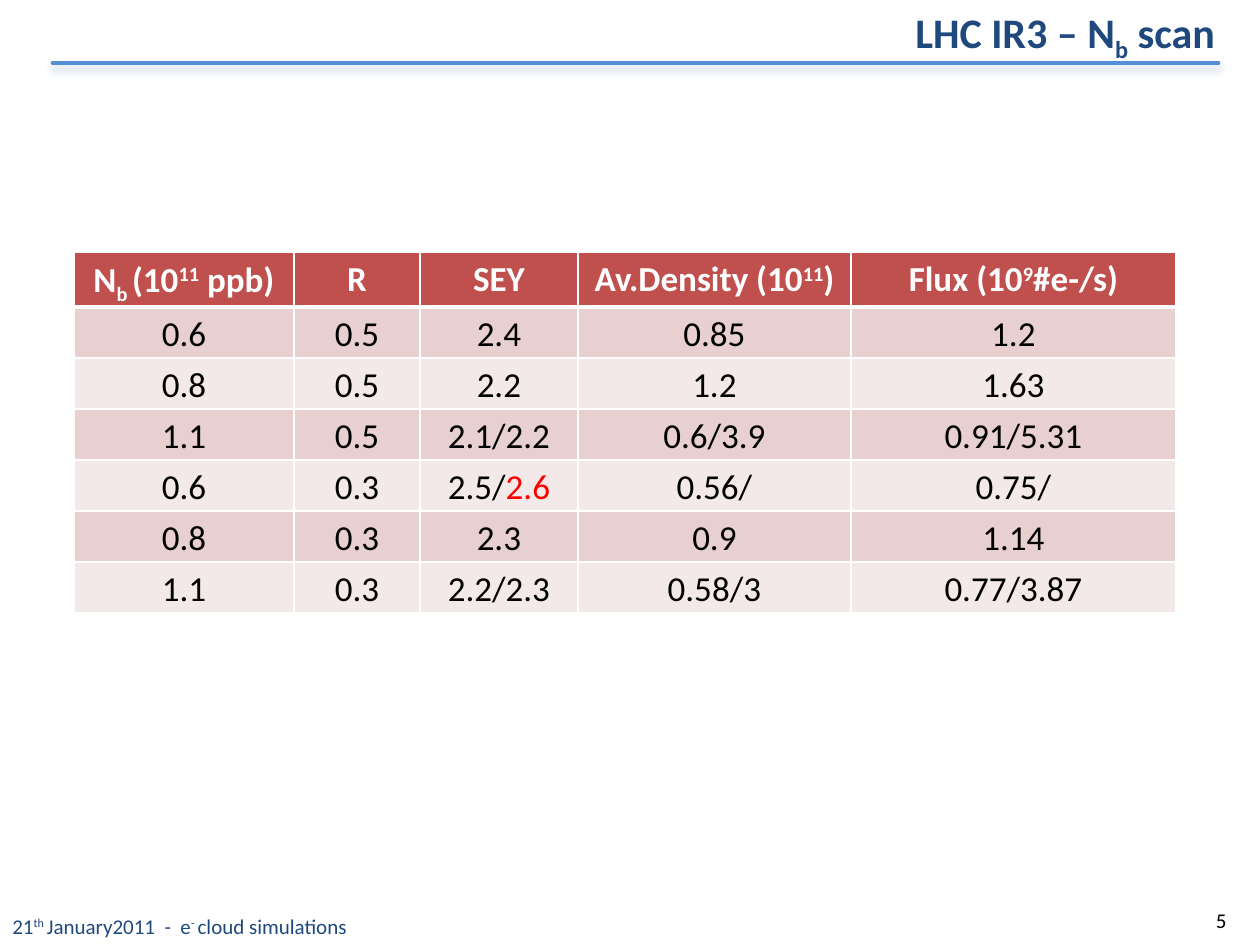
from lxml import etree
from pptx import Presentation
from pptx.dml.color import RGBColor as RGB
from pptx.enum.shapes import MSO_CONNECTOR as CONN
from pptx.enum.text import MSO_ANCHOR as ANCHOR, MSO_AUTO_SIZE as FIT, PP_ALIGN as ALIGN
from pptx.oxml import parse_xml
from pptx.util import Emu, Pt

NS = "http://schemas.openxmlformats.org/drawingml/2006/main"
THEME = {
    "font": "Calibri", "navy": "1F497D", "rule": "558ED5", "shadow": "95B3D7",
    "head": "C0504D", "bands": ("E8D0D0", "F4E9E9"), "white": "FFFFFF",
    "black": "000000", "red": "FF0000",
    "title": 24, "table": 20, "small": 12,
}
BASELINE = {"sub": -25000, "sup": 30000}

TITLE = ["LHC IR3 – N", ("b", "sub"), " scan"]
FOOTER = ["21", ("th ", "sup"), "January2011  -  e", ("- ", "sup"), "cloud simulations"]
PAGE = ["5"]
HEADER = [
    ["N", ("b ", "sub"), "(10", ("11", "sup"), " ppb)"],
    ["R"],
    ["SEY"],
    ["Av.Density (10", ("11", "sup"), ")"],
    ["Flux (10", ("9", "sup"), "#e-/s)"],
]
ROWS = [
    ["0.6", "0.5", "2.4", "0.85", "1.2"],
    ["0.8", "0.5", "2.2", "1.2", "1.63"],
    ["1.1", "0.5", "2.1/2.2", "0.6/3.9", "0.91/5.31"],
    ["0.6", "0.3", ["2.5/", ("2.6", "red")], "0.56/", "0.75/"],
    ["0.8", "0.3", "2.3", "0.9", "1.14"],
    ["1.1", "0.3", "2.2/2.3", "0.58/3", "0.77/3.87"],
]
COLS = [220, 126, 158, 273, 325]
ROW_H = 51
TABLE_AT = (74, 252)
RULE = (53, 63, 1218, 63)
BOXES = [
    (PAGE, (945, 895, 294, 50), "small", "black", False,
     {"vertical_anchor": ANCHOR.MIDDLE}, ALIGN.RIGHT),
    (TITLE, (903, 0, 337, 63), "title", "navy", True,
     {"auto_size": FIT.SHAPE_TO_FIT_TEXT}, ALIGN.LEFT),
    (FOOTER, (0, 907, 1187, 38), "small", "navy", False,
     {"auto_size": FIT.SHAPE_TO_FIT_TEXT}, ALIGN.LEFT),
]


def px(n):
    return Emu(round(n * 914400 / 126))


def apply(obj, **values):
    for name, value in values.items():
        setattr(obj, name, value)


def write(p, runs, size, color, bold):
    for run in runs:
        text, mark = run if isinstance(run, tuple) else (run, None)
        r = p.add_run()
        r.text = text
        apply(r.font, name=THEME["font"], size=Pt(THEME[size]), bold=bold)
        r.font.color.rgb = RGB.from_string(THEME["red" if mark == "red" else color])
        if mark in BASELINE:
            r.font._element.set("baseline", str(BASELINE[mark]))


def add_box(sl, runs, at, size, color, bold, frame, align):
    tf = sl.shapes.add_textbox(*map(px, at)).text_frame
    apply(tf, word_wrap=True, **frame)
    p = tf.paragraphs[0]
    p.alignment = align
    write(p, runs, size, color, bold)


def add_rule(sl):
    ln = sl.shapes.add_connector(CONN.STRAIGHT, *map(px, RULE))
    ln.line.width = Pt(2.75)
    ln.line.color.rgb = RGB.from_string(THEME["rule"])
    sp_pr = ln._element.spPr
    sp_pr.find(f"{{{NS}}}ln").set("cap", "rnd")
    sp_pr.append(parse_xml(
        f'<a:effectLst xmlns:a="{NS}"><a:outerShdw blurRad="{Pt(4)}" dist="{Pt(3)}" '
        f'dir="5400000" rotWithShape="0"><a:srgbClr val="{THEME["shadow"]}">'
        '<a:alpha val="40000"/></a:srgbClr></a:outerShdw></a:effectLst>'))


def add_borders(cell, row):
    widths = {"L": 1, "R": 1, "T": 3 if row == 1 else 1, "B": 3 if row == 0 else 1}
    tc_pr = cell._tc.get_or_add_tcPr()
    for i, (side, width) in enumerate(widths.items()):
        ln = etree.Element(f"{{{NS}}}ln{side}", w=str(Pt(width)))
        fill = etree.SubElement(ln, f"{{{NS}}}solidFill")
        etree.SubElement(fill, f"{{{NS}}}srgbClr", val=THEME["white"])
        tc_pr.insert(i, ln)


def add_grid(sl):
    rows = [HEADER] + ROWS
    size = (sum(COLS), ROW_H * len(rows))
    table = sl.shapes.add_table(len(rows), len(COLS), *map(px, TABLE_AT + size)).table
    for col, width in zip(table.columns, COLS):
        col.width = px(width)
    for i, row in enumerate(rows):
        table.rows[i].height = px(ROW_H)
        head = i == 0
        fill = THEME["head"] if head else THEME["bands"][(i - 1) % 2]
        for j, runs in enumerate(row):
            cell = table.cell(i, j)
            apply(cell, margin_left=px(9), margin_right=px(9), margin_top=0, margin_bottom=0)
            cell.fill.solid()
            cell.fill.fore_color.rgb = RGB.from_string(fill)
            add_borders(cell, i)
            p = cell.text_frame.paragraphs[0]
            apply(p, alignment=ALIGN.CENTER, line_spacing=1.15)
            write(p, [runs] if isinstance(runs, str) else runs,
                  "table", "white" if head else "black", head)


def main():
    prs = Presentation()
    apply(prs, slide_width=px(1260), slide_height=px(945))
    sl = prs.slides.add_slide(prs.slide_layouts[6])
    add_rule(sl)
    for box in BOXES:
        add_box(sl, *box)
    add_grid(sl)
    prs.save("out.pptx")


if __name__ == "__main__":
    main()
